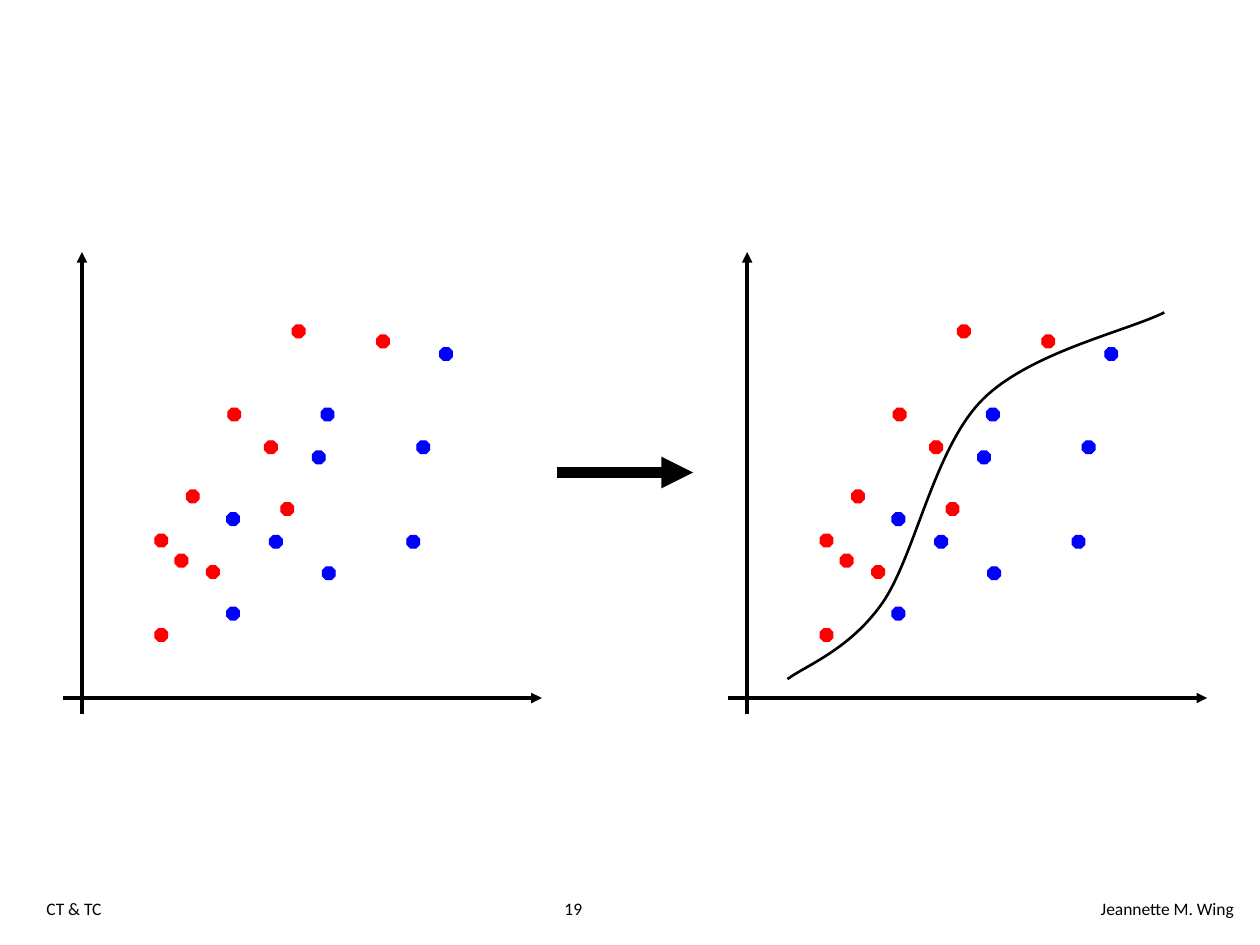
from lxml.etree import SubElement
from pptx import Presentation
from pptx.dml.color import RGBColor
from pptx.enum.shapes import MSO_CONNECTOR, MSO_SHAPE
from pptx.enum.text import PP_ALIGN
from pptx.oxml.ns import qn
from pptx.util import Emu, Pt

EMU_PER_PX = 9144  # 100 px to the inch
COLORS = {"ink": "000000", "red": "FF0000", "blue": "0000FF"}
DOT_SIZE = 10
PLOT_STEP = 528

# Left and top of each dot in the first plot
DOTS = {
    "red": [(210, 350), (148, 389), (164, 449), (123, 499), (181, 324),
            (123, 424), (139, 440), (223, 399), (232, 258), (299, 266)],
    "blue": [(255, 324), (214, 425), (323, 425), (180, 482), (248, 358),
             (180, 407), (256, 450), (331, 350), (349, 276)],
}
# Start point, then two control points and an end point for each arc
BOUNDARY = [(97, 539),
            (110, 529), (146, 516), (172, 479),
            (198, 442), (213, 357), (251, 318),
            (288, 280), (366, 263), (396, 248)]
FOOTERS = [("CT & TC", 27, 208, PP_ALIGN.LEFT),
           ("19", 351, 208, PP_ALIGN.CENTER),
           ("Jeannette M. Wing", 691, 298, PP_ALIGN.RIGHT)]


def px(length):
    return Emu(length * EMU_PER_PX)


def color(name):
    return RGBColor.from_string(COLORS[name])


class Sketch:
    font = {"name": "Calibri", "size": Pt(10)}

    def __init__(self, slide):
        self.slide = slide

    def outline(self, shape, name, width):
        shape.line.color.rgb = color(name)
        shape.line.width = Pt(width)

    def footer(self, text, left, width, alignment):
        box = self.slide.shapes.add_textbox(px(left), px(708), px(width), px(33))
        box.text_frame.word_wrap = True
        paragraph = box.text_frame.paragraphs[0]
        paragraph.alignment = alignment
        run = paragraph.add_run()
        run.text = text
        for key, value in self.font.items():
            setattr(run.font, key, value)
        run.font.color.rgb = color("ink")

    def arrow(self, shapes, start, end, width):
        line = shapes.add_connector(MSO_CONNECTOR.STRAIGHT, *map(px, start + end))
        self.outline(line, "ink", width)
        SubElement(line.line._get_or_add_ln(), qn("a:tailEnd"), type="triangle")
        SubElement(line._element.spPr, qn("a:effectLst"))

    def dot(self, shapes, left, top, name):
        dot = shapes.add_shape(MSO_SHAPE.OCTAGON, px(left), px(top),
                               px(DOT_SIZE), px(DOT_SIZE))
        dot.shadow.inherit = False
        dot.fill.solid()
        dot.fill.fore_color.rgb = color(name)
        self.outline(dot, name, 0.75)

    def curve(self, shapes, points):
        """Draw cubic arcs by merging every three line segments into one."""
        builder = shapes.build_freeform(*points[0], scale=EMU_PER_PX)
        builder.add_line_segments(points[1:], close=False)
        curve = builder.convert_to_shape()
        curve.shadow.inherit = False
        curve.fill.background()
        self.outline(curve, "ink", 1.5)
        outline = curve._element.find(".//" + qn("a:path"))
        segments = outline.findall(qn("a:lnTo"))
        for first in range(0, len(segments), 3):
            arc = SubElement(outline, qn("a:cubicBezTo"))
            for segment in segments[first:first + 3]:
                arc.append(segment[0])
                outline.remove(segment)

    def plot(self, shift, boundary=()):
        shapes = self.slide.shapes.add_group_shape().shapes
        if boundary:
            self.curve(shapes, [(x + shift, y) for x, y in boundary])
        self.arrow(shapes, (65 + shift, 567), (65 + shift, 200), 2)
        self.arrow(shapes, (50 + shift, 554), (430 + shift, 554), 2)
        for name, corners in DOTS.items():
            for left, top in corners:
                self.dot(shapes, left + shift, top, name)


def main():
    deck = Presentation()
    deck.slide_width, deck.slide_height = px(1000), px(750)
    sketch = Sketch(deck.slides.add_slide(deck.slide_layouts[6]))
    for footer in FOOTERS:
        sketch.footer(*footer)
    sketch.plot(0)
    sketch.arrow(sketch.slide.shapes, (442, 375), (550, 375), 6)
    sketch.plot(PLOT_STEP, BOUNDARY)
    deck.save("out.pptx")


if __name__ == "__main__":
    main()
